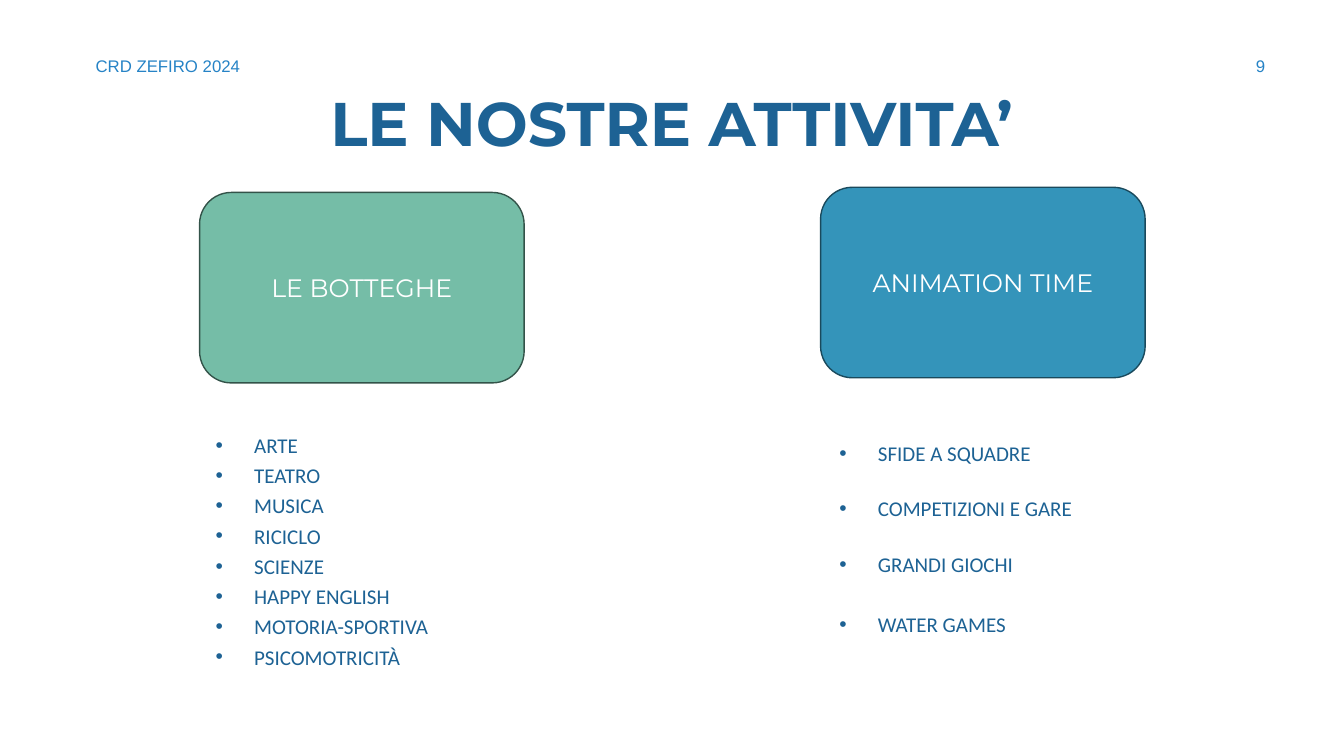
from lxml.etree import SubElement
from pptx import Presentation
from pptx.dml.color import RGBColor
from pptx.enum.shapes import MSO_SHAPE
from pptx.enum.text import MSO_ANCHOR, MSO_AUTO_SIZE, PP_ALIGN
from pptx.oxml.ns import qn
from pptx.util import Cm, Pt

HUES = {
    "navy": "1D6294",
    "blue": "2683C6",
    "white": "FFFFFF",
    "green": "75BDA7",
    "moss": "335349",
    "teal": "3494BA",
    "deep": "1A4A5D",
}

# Text formats: font values and their colour
HEAD = ({"name": "Montserrat", "size": Pt(44), "bold": True}, "navy")
NOTE = ({"name": "Arial", "size": Pt(12), "bold": False}, "blue")
ITEM = ({"name": "Calibri", "size": Pt(15), "bold": False}, "navy")
CARD = ({"name": "Montserrat", "size": Pt(18), "bold": False}, "white")

CRAFTS = ["ARTE", "TEATRO", "MUSICA", "RICICLO", "SCIENZE",
          "HAPPY ENGLISH", "MOTORIA-SPORTIVA", "PSICOMOTRICITÀ"]
GAMES = ["SFIDE A SQUADRE", "COMPETIZIONI E GARE", "GRANDI GIOCHI",
         "WATER GAMES"]


def tint(name):
    return RGBColor.from_string(HUES[name])


def place(shape, box):
    for key, val in zip(("left", "top", "width", "height"), box):
        setattr(shape, key, Cm(val))


def write(par, text, style, align=PP_ALIGN.LEFT):
    font, hue = style
    run = par.add_run()
    run.text = text
    for key, val in font.items():
        setattr(run.font, key, val)
    run.font.color.rgb = tint(hue)
    par.alignment = align


def frame(shape, anchor):
    form = {"word_wrap": True, "auto_size": MSO_AUTO_SIZE.NONE,
            "vertical_anchor": anchor}
    for key, val in form.items():
        setattr(shape.text_frame, key, val)
    return shape.text_frame


def add_title(slide, box, text):
    title = slide.shapes.title
    place(title, box)
    body = frame(title, MSO_ANCHOR.MIDDLE)
    write(body.paragraphs[0], text, HEAD, PP_ALIGN.CENTER)


def add_note(slide, box, text, align):
    note = slide.shapes.add_textbox(*map(Cm, box))
    body = frame(note, MSO_ANCHOR.MIDDLE)
    write(body.paragraphs[0], text, NOTE, align)


def add_list(holder, box, items, gaps):
    place(holder, box)
    body = frame(holder, MSO_ANCHOR.TOP)
    for num, (text, gap) in enumerate(zip(items, gaps)):
        par = body.add_paragraph() if num else body.paragraphs[0]
        write(par, text, ITEM)
        par.line_spacing = 1.0
        par.space_before = Pt(gap)
        # Hanging bullet
        props = par._p.get_or_add_pPr()
        props.set("marL", str(Cm(0.97)))
        props.set("indent", str(-Cm(0.97)))
        SubElement(props, qn("a:buFont"), typeface="Arial")
        SubElement(props, qn("a:buChar"), char="•")


def add_card(slide, box, text, fill, edge):
    card = slide.shapes.add_shape(MSO_SHAPE.ROUNDED_RECTANGLE, *map(Cm, box))
    card.shadow.inherit = False
    card.fill.solid()
    card.fill.fore_color.rgb = tint(fill)
    card.line.color.rgb = tint(edge)
    card.line.width = Pt(1)
    body = frame(card, MSO_ANCHOR.MIDDLE)
    write(body.paragraphs[0], text, CARD, PP_ALIGN.CENTER)


def main():
    deck = Presentation()
    deck.slide_width, deck.slide_height = Cm(33.87), Cm(19.05)
    slide = deck.slides.add_slide(deck.slide_layouts[3])
    left, right = slide.placeholders[1], slide.placeholders[2]

    # Header
    add_title(slide, (2.11, 2.01, 29.64, 2.13), "LE NOSTRE ATTIVITA’")
    add_note(slide, (2.16, 1.27, 8.89, 0.76), "CRD ZEFIRO 2024",
             PP_ALIGN.LEFT)
    add_note(slide, (30.4, 1.27, 2.74, 0.76), "9", PP_ALIGN.CENTER)

    # Activity lists
    add_list(left, (5.18, 10.77, 7.7, 6.27), CRAFTS, [3.6] * len(CRAFTS))
    add_list(right, (20.9, 10.97, 7.7, 5.61), GAMES, [3.6, 21.6, 21.6, 25.2])

    # Activity cards
    add_card(slide, (5.03, 4.85, 8.18, 4.8), "LE BOTTEGHE", "green", "moss")
    add_card(slide, (20.68, 4.72, 8.18, 4.8), "ANIMATION TIME",
             "teal", "deep")

    deck.save("out.pptx")


if __name__ == "__main__":
    main()
